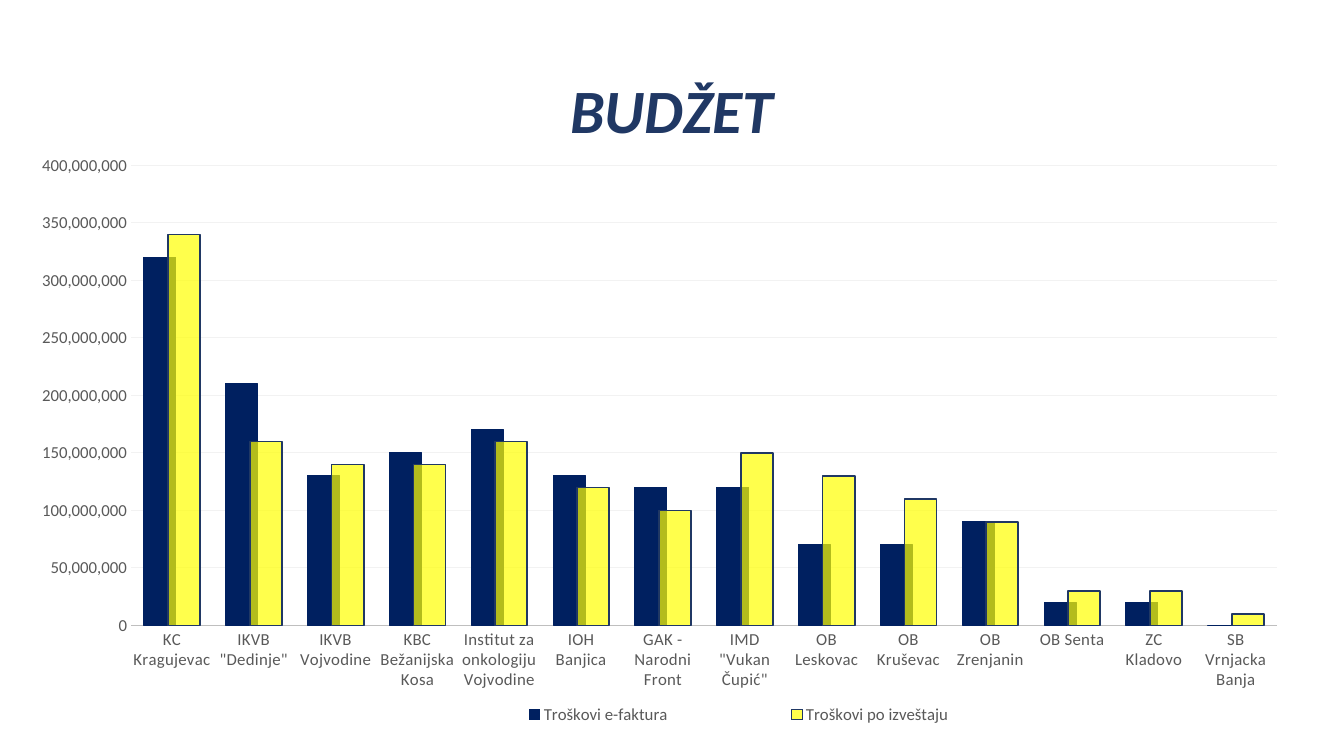
"""Build the budget slide comparing invoiced and reported costs per hospital."""
from dataclasses import dataclass

import pptx
import pptx.chart.data
import pptx.dml.color
import pptx.enum.chart
import pptx.enum.text
import pptx.oxml
import pptx.oxml.ns
import pptx.util

Pt = pptx.util.Pt
RGBColor = pptx.dml.color.RGBColor

NAVY = RGBColor(0x00, 0x20, 0x60)
DARK_BLUE = RGBColor(0x20, 0x38, 0x64)
YELLOW = RGBColor(0xFF, 0xFF, 0x00)
WHITE = RGBColor(0xFF, 0xFF, 0xFF)
TEXT_GREY = RGBColor(0x59, 0x59, 0x59)
AXIS_GREY = RGBColor(0xBF, 0xBF, 0xBF)
GRID_GREY = RGBColor(0xF2, 0xF2, 0xF2)
FONT = "Calibri"
MILLION = 1_000_000

HOSPITALS = [
    "KC Kragujevac", 'IKVB "Dedinje"', "IKVB Vojvodine", "KBC Bežanijska Kosa",
    "Institut za onkologiju Vojvodine", "IOH Banjica", "GAK - Narodni Front",
    'IMD "Vukan Čupić"', "OB Leskovac", "OB Kruševac", "OB Zrenjanin", "OB Senta",
    "ZC Kladovo", "SB Vrnjacka Banja",
]


@dataclass
class CostSeries:
    name: str
    millions: list[int]
    fill: RGBColor
    opacity: int
    line: RGBColor
    line_width: float


@dataclass
class Frame:
    left: float
    top: float
    width: float
    height: float


CHART_FRAME = Frame(8.6, 103, 921.6, 423.4)
PLOT_FRAME = Frame(93.6, 118.2, 818.4, 328.6)
LEGEND_FRAME = Frame(293.6, 497.5, 468.6, 25.4)

COSTS = [
    CostSeries("Troškovi e-faktura",
               [320, 210, 130, 150, 170, 130, 120, 120, 70, 70, 90, 20, 20, 0],
               NAVY, 100, NAVY, 0.75),
    CostSeries("Troškovi po izveštaju",
               [340, 160, 140, 140, 160, 120, 100, 150, 130, 110, 90, 30, 30, 10],
               YELLOW, 70, DARK_BLUE, 1.25),
]


def add_title(page, text: str) -> None:
    title = page.shapes.title
    title.left, title.top, title.width, title.height = Pt(66), Pt(28.8), Pt(828), Pt(104.4)
    title.fill.solid()
    title.fill.fore_color.rgb = WHITE
    title.text_frame.vertical_anchor = pptx.enum.text.MSO_ANCHOR.MIDDLE
    para = title.text_frame.paragraphs[0]
    para.alignment = pptx.enum.text.PP_ALIGN.CENTER
    para.line_spacing = 0.9
    span = para.add_run()
    span.text = text
    span.font.name, span.font.size = FONT, Pt(44)
    span.font.bold = span.font.italic = True
    span.font.color.rgb = DARK_BLUE


def style_font(font) -> None:
    font.name, font.size, font.bold = FONT, Pt(12), False
    font.color.rgb = TEXT_GREY


def style_line(line, color: RGBColor, width: float) -> None:
    line.color.rgb = color
    line.width = Pt(width)


def set_layout(element, frame: Frame, inner: bool = False) -> None:
    for old in element.findall(pptx.oxml.ns.qn("c:layout")):
        element.remove(old)
    position = {
        "x": (frame.left - CHART_FRAME.left) / CHART_FRAME.width,
        "y": (frame.top - CHART_FRAME.top) / CHART_FRAME.height,
        "w": frame.width / CHART_FRAME.width,
        "h": frame.height / CHART_FRAME.height,
    }
    target = '<c:layoutTarget val="inner"/>' if inner else ""
    modes = '<c:xMode val="edge"/><c:yMode val="edge"/>'
    sizes = "".join(f'<c:{key} val="{value}"/>' for key, value in position.items())
    layout = pptx.oxml.parse_xml(
        f'<c:layout {pptx.oxml.ns.nsdecls("c")}><c:manualLayout>'
        f"{target}{modes}{sizes}</c:manualLayout></c:layout>")
    if inner:
        element.insert(0, layout)
    else:
        element.find(pptx.oxml.ns.qn("c:legendPos")).addnext(layout)


def style_series(series, cost: CostSeries) -> None:
    series.invert_if_negative = False
    series.format.fill.solid()
    series.format.fill.fore_color.rgb = cost.fill
    style_line(series.format.line, cost.line, cost.line_width)
    if cost.opacity < 100:
        color = series.format.fill._xPr.find(".//" + pptx.oxml.ns.qn("a:srgbClr"))
        color.append(pptx.oxml.parse_xml(
            f'<a:alpha {pptx.oxml.ns.nsdecls("a")} val="{cost.opacity * 1000}"/>'))


def style_axes(chart) -> None:
    for axis in (chart.category_axis, chart.value_axis):
        axis.major_tick_mark = axis.minor_tick_mark = pptx.enum.chart.XL_TICK_MARK.NONE
        style_font(axis.tick_labels.font)
    style_line(chart.category_axis.format.line, AXIS_GREY, 1.25)
    for properties in chart.category_axis._element.iter(pptx.oxml.ns.qn("a:defRPr")):
        properties.set("spc", "20")
    values = chart.value_axis
    values.minimum_scale, values.maximum_scale = 0, 400 * MILLION
    values.major_unit = 50 * MILLION
    values.format.line.fill.background()
    values.has_major_gridlines = True
    style_line(values.major_gridlines.format.line, GRID_GREY, 0.75)
    values.tick_labels.number_format = "#,##0"
    values.tick_labels.number_format_is_linked = False


def add_cost_chart(page) -> None:
    data = pptx.chart.data.CategoryChartData(number_format="#,##0")
    data.categories = HOSPITALS
    for cost in COSTS:
        data.add_series(cost.name, [value * MILLION for value in cost.millions])
    chart = page.shapes.add_chart(
        pptx.enum.chart.XL_CHART_TYPE.COLUMN_CLUSTERED,
        Pt(CHART_FRAME.left), Pt(CHART_FRAME.top),
        Pt(CHART_FRAME.width), Pt(CHART_FRAME.height), data).chart
    chart.has_title = False
    style_font(chart.font)
    plot = chart.plots[0]
    plot.gap_width, plot.overlap, plot.vary_by_categories = 80, 25, False
    for series, cost in zip(plot.series, COSTS):
        style_series(series, cost)
    style_axes(chart)
    chart.has_legend = True
    chart.legend.position = pptx.enum.chart.XL_LEGEND_POSITION.BOTTOM
    chart.legend.include_in_layout = False
    style_font(chart.legend.font)
    set_layout(chart.legend._element, LEGEND_FRAME)
    set_layout(chart._chartSpace.chart.plotArea, PLOT_FRAME, inner=True)


def main() -> None:
    deck = pptx.Presentation()
    deck.slide_width, deck.slide_height = Pt(960), Pt(540)
    page = deck.slides.add_slide(deck.slide_layouts[5])
    add_title(page, "BUDŽET")
    add_cost_chart(page)
    deck.save("out.pptx")


if __name__ == "__main__":
    main()
